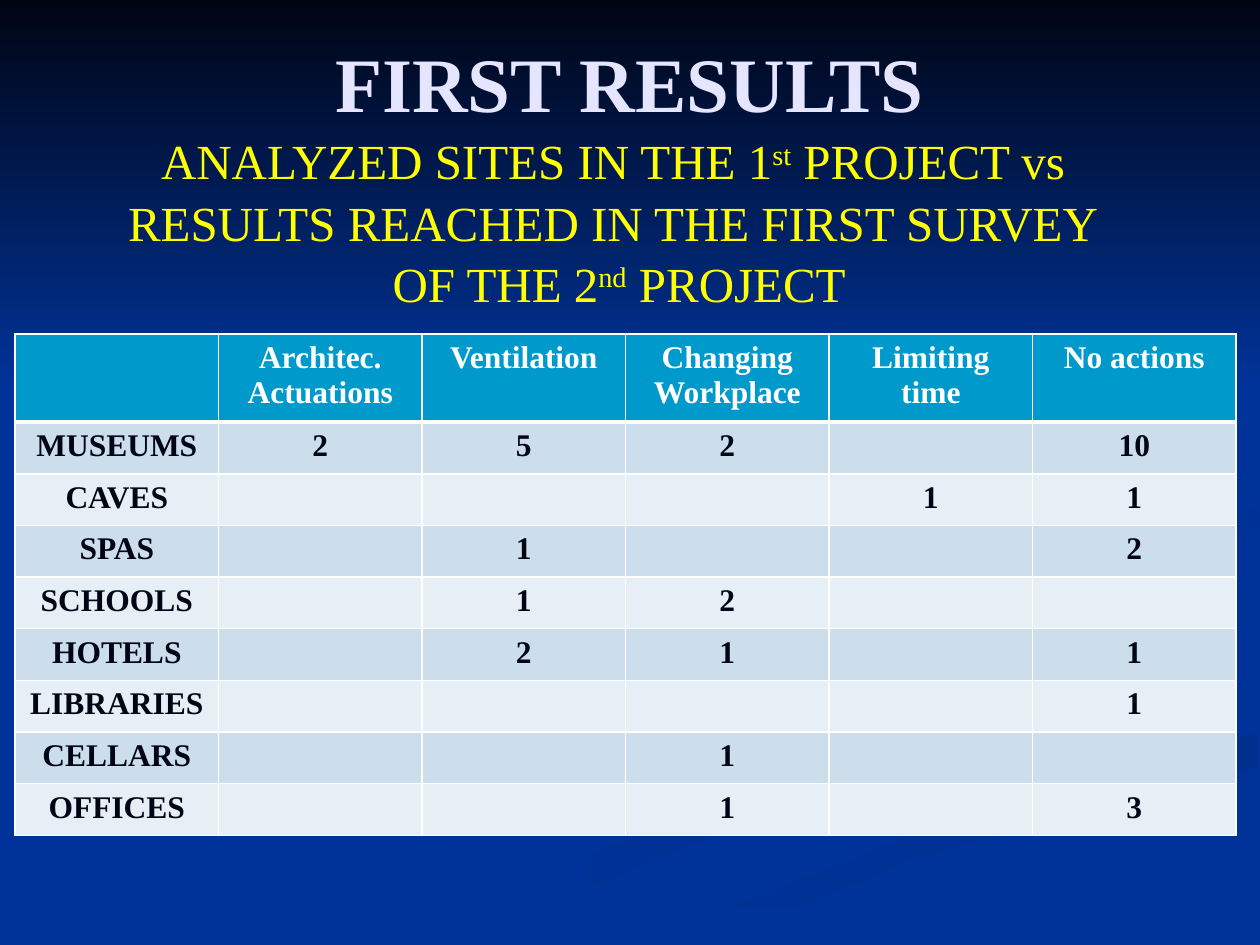
from dataclasses import dataclass

from lxml import etree
from pptx import Presentation
from pptx.dml.color import RGBColor
from pptx.enum import shapes, text
from pptx.oxml import ns
from pptx.util import Inches, Pt

FONT = "Times New Roman"
NAVY = RGBColor.from_string("000514")
BLUE = RGBColor.from_string("003399")
SHADE = RGBColor.from_string("003193")
DEEP = RGBColor.from_string("002F8C")
LAVENDER = RGBColor.from_string("E5E5FF")
YELLOW = RGBColor.from_string("FFFF00")
WHITE = RGBColor.from_string("FFFFFF")
CYAN = RGBColor.from_string("0099CC")
BAND_DARK = RGBColor.from_string("CCDEEC")
BAND_LIGHT = RGBColor.from_string("E7EFF6")


@dataclass
class Ribbon:
    start: RGBColor
    end: RGBColor
    angle: int
    outline: list[tuple[float, float]]


RIBBONS = [
    Ribbon(BLUE, SHADE, 0, [
        (5.75, 4.59), (7.86, 5.66), (5.39, 6.49), (3, 7.49), (3.61, 7.49), (5.64, 6.65),
        (8, 5.81)]),
    Ribbon(BLUE, SHADE, 45, [
        (7.24, 4.64), (9.18, 5.81), (8.94, 6.05), (9.43, 5.7)]),
    Ribbon(DEEP, BLUE, 90, [
        (5.03, 7.49), (5.71, 7.49), (7.22, 6.82), (9.98, 6.09), (9.98, 5.81), (7.64, 6.47),
        (6.3, 6.93)]),
    Ribbon(BLUE, BLUE, 0, [
        (7.25, 4.64), (9.43, 5.75), (4.77, 7.49), (5.03, 7.49), (7.64, 6.47), (9.99, 5.81),
        (9.99, 5.38), (7.82, 4.6), (9.99, 3.87)]),
    Ribbon(DEEP, BLUE, 45, [
        (7.81, 4.6), (8.26, 4.96), (8.16, 4.59), (9.98, 4.2), (9.98, 4.02)]),
    Ribbon(DEEP, BLUE, 45, [
        (7.62, 2.33), (8.89, 3.35), (5.77, 4.62), (6.22, 5), (6.24, 4.44), (8.94, 3.44)]),
]

HEADINGS = ["", "Architec.\nActuations", "Ventilation", "Changing Workplace",
            "Limiting time", "No actions"]
SITES = [
    ["MUSEUMS", "2", "5", "2", "", "10"],
    ["CAVES", "", "", "", "1", "1"],
    ["SPAS", "", "1", "", "", "2"],
    ["SCHOOLS", "", "1", "2", "", ""],
    ["HOTELS", "", "2", "1", "", "1"],
    ["LIBRARIES", "", "", "", "", "1"],
    ["CELLARS", "", "", "1", "", ""],
    ["OFFICES", "", "", "1", "", "3"],
]
SUBTITLE = [
    [("ANALYZED SITES IN THE 1", False), ("st", True), (" PROJECT vs", False)],
    [("RESULTS REACHED IN THE FIRST SURVEY", False)],
    [(" OF THE 2", False), ("nd", True), (" PROJECT", False)],
]


def paint(shape, start: RGBColor, end: RGBColor, angle: int) -> None:
    shape.shadow.inherit = False
    shape.line.fill.background()
    if start == end:
        shape.fill.solid()
        shape.fill.fore_color.rgb = start
        return
    shape.fill.gradient()
    shape.fill.gradient_angle = -angle % 360
    for stop, color in zip(shape.fill.gradient_stops, (start, end)):
        stop.color.rgb = color


def draw_ribbon(slide, ribbon: Ribbon) -> None:
    first, *rest = [(Inches(x), Inches(y)) for x, y in ribbon.outline]
    builder = slide.shapes.build_freeform(*first)
    builder.add_line_segments(rest)
    paint(builder.convert_to_shape(), ribbon.start, ribbon.end, ribbon.angle)


def style(paragraph, size: int, color: RGBColor, bold: bool) -> None:
    paragraph.alignment = text.PP_ALIGN.CENTER
    font = paragraph.font
    font.name, font.size, font.bold = FONT, Pt(size), bold
    font.color.rgb = color


def draw_title(slide) -> None:
    frame = slide.shapes.add_textbox(
        Inches(0.5), Inches(0.3), Inches(9), Inches(0.69)).text_frame
    frame.word_wrap = True
    frame.vertical_anchor = text.MSO_ANCHOR.MIDDLE
    frame.text = "FIRST RESULTS"
    style(frame.paragraphs[0], 44, LAVENDER, True)


def draw_subtitle(slide) -> None:
    frame = slide.shapes.add_textbox(
        Inches(0.91), Inches(0.99), Inches(7.91), Inches(1.51)).text_frame
    frame.word_wrap = False
    frame.text = "\n".join("" for _ in SUBTITLE)
    for paragraph, pieces in zip(frame.paragraphs, SUBTITLE):
        style(paragraph, 28, YELLOW, False)
        paragraph.space_before = Pt(1.4)
        for wording, raised in pieces:
            run = paragraph.add_run()
            run.text = wording
            if raised:
                run.font._element.set("baseline", "30000")


def draw_cell(cell, wording: str, fill: RGBColor, color: RGBColor, edges: dict[str, int]) -> None:
    properties = cell._tc.get_or_add_tcPr()
    for side, width in edges.items():
        border = etree.SubElement(properties, ns.qn(f"a:ln{side}"), w=str(Pt(width)))
        solid = etree.SubElement(border, ns.qn("a:solidFill"))
        etree.SubElement(solid, ns.qn("a:srgbClr"), val=str(WHITE))
    cell.fill.solid()
    cell.fill.fore_color.rgb = fill
    cell.text = wording
    for paragraph in cell.text_frame.paragraphs:
        style(paragraph, 18, color, True)


def draw_table(slide) -> None:
    rows = [HEADINGS, *SITES]
    table = slide.shapes.add_table(
        len(rows), len(HEADINGS), Inches(0.12), Inches(2.65), Inches(9.69), Inches(3.94)).table
    for r, row in enumerate(rows):
        table.rows[r].height = Inches(0.41 if r else 0.69)
        fill = (BAND_DARK if r % 2 else BAND_LIGHT) if r else CYAN
        edges = {"L": 1, "R": 1, "T": 3 if r == 1 else 1, "B": 1 if r else 3}
        for c, wording in enumerate(row):
            draw_cell(table.cell(r, c), wording, fill, NAVY if r else WHITE, edges)


def main() -> None:
    deck = Presentation()
    deck.slide_width, deck.slide_height = Inches(10), Inches(7.5)
    slide = deck.slides.add_slide(deck.slide_layouts[6])
    slide.background.fill.solid()
    slide.background.fill.fore_color.rgb = BLUE
    for ribbon in RIBBONS:
        draw_ribbon(slide, ribbon)
    sky = slide.shapes.add_shape(
        shapes.MSO_SHAPE.RECTANGLE, 0, 0, Inches(10), Inches(3.08))
    paint(sky, NAVY, BLUE, 90)
    draw_title(slide)
    draw_subtitle(slide)
    draw_table(slide)
    deck.save("out.pptx")


if __name__ == "__main__":
    main()
